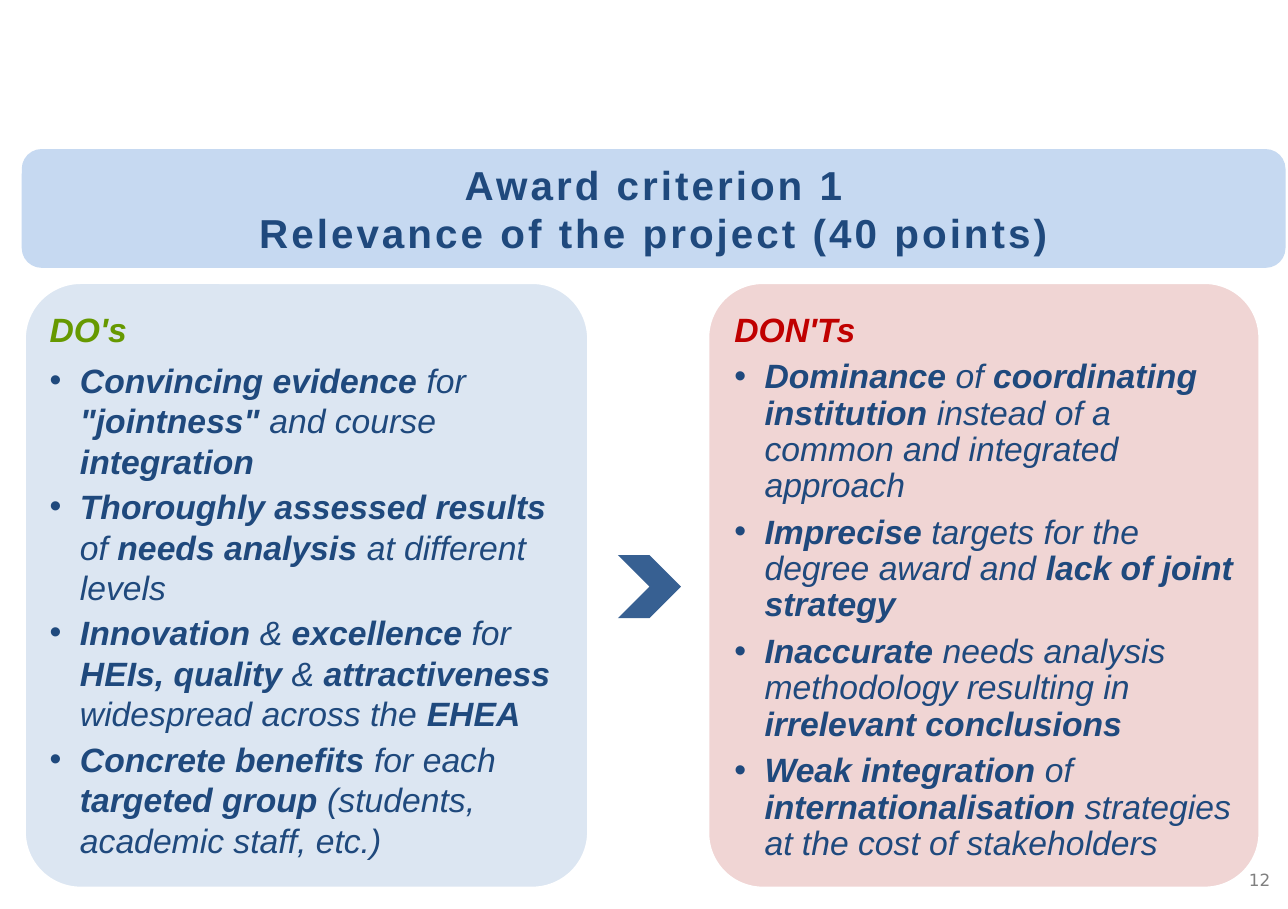
from lxml import etree
from pptx import Presentation
from pptx.dml.color import RGBColor
from pptx.enum.shapes import MSO_SHAPE
from pptx.enum.text import MSO_ANCHOR, MSO_AUTO_SIZE, PP_ALIGN
from pptx.oxml.ns import qn
from pptx.util import Inches, Pt

ROUNDED, CHEVRON = MSO_SHAPE.ROUNDED_RECTANGLE, MSO_SHAPE.CHEVRON
TOP, MIDDLE = MSO_ANCHOR.TOP, MSO_ANCHOR.MIDDLE
LEFT, CENTER = PP_ALIGN.LEFT, PP_ALIGN.CENTER
NO_FIT = MSO_AUTO_SIZE.NONE

COLORS = {
    "banner": "C6D9F1", "navy": "1F497D", "arrow": "376092",
    "do panel": "DCE6F2", "do": "669900",
    "dont panel": "E6B9B8", "dont": "C00000",
    "white": "FFFFFF", "grey": "808080",
}

# Asterisks enclose the bold words
DOS = [
    '*Convincing evidence* for *"jointness"* and course *integration*',
    "*Thoroughly assessed results* of *needs analysis *at different levels",
    "*Innovation *&* excellence* for *HEIs, quality* & *attractiveness*"
    " widespread across the *EHEA*",
    "*Concrete benefits* for each *targeted group*"
    " (students, academic staff, etc.)",
]
DONTS = [
    "*Dominance* of *coordinating institution* instead of a common"
    " and integrated approach",
    "*Imprecise* targets for the degree award and *lack of joint strategy*",
    "*Inaccurate* needs analysis methodology resulting in"
    " *irrelevant conclusions*",
    "*Weak integration* of *internationalisation* strategies"
    " at the cost of stakeholders",
]


class SlideBuilder:
    def __init__(self, page):
        self.page = page
        self.font = "Arial"

    def color(self, name):
        return RGBColor.from_string(COLORS[name])

    def shape(self, kind, area, fill, corner=None, opacity=None, outline=None):
        shape = self.page.shapes.add_shape(kind, *map(Inches, area))
        shape.shadow.inherit = False
        shape.fill.solid()
        shape.fill.fore_color.rgb = self.color(fill)
        if corner is not None:
            shape.adjustments[0] = corner
        if opacity is not None:
            tint = shape.fill._xPr.find(f".//{qn('a:srgbClr')}")
            etree.SubElement(tint, qn("a:alpha"), val=str(opacity * 1000))
        if outline:
            shape.line.color.rgb = self.color(outline)
            shape.line.width = Pt(2)
        else:
            shape.line.fill.background()

    def frame(self, box, area, anchor, side=0.08, end=0.08):
        box.left, box.top, box.width, box.height = map(Inches, area)
        text = box.text_frame
        text.word_wrap, text.auto_size = True, NO_FIT
        text.vertical_anchor = anchor
        text.margin_left = text.margin_right = Inches(side)
        text.margin_top = text.margin_bottom = Inches(end)
        return text

    def placeholder(self, number, area, anchor, end=0.08):
        box = self.page.placeholders[number]
        self.page.shapes._spTree.append(box._element)  # in front of its panel
        return self.frame(box, area, anchor, end=end)

    def para(self, text, first, align=LEFT, after=0, spacing=1.0, bullet=False):
        para = text.paragraphs[0] if first else text.add_paragraph()
        properties = para._p.get_or_add_pPr()
        indent = Inches(0.25) if bullet else 0
        properties.set("marL", str(indent))
        properties.set("indent", str(-indent))
        if bullet:
            etree.SubElement(properties, qn("a:buFont"), typeface="Arial")
            etree.SubElement(properties, qn("a:buChar"), char="•")
        else:
            etree.SubElement(properties, qn("a:buNone"))
        para.alignment, para.line_spacing = align, spacing
        para.space_before, para.space_after = Pt(0), Pt(after)
        return para

    def span(self, para, words, size, color, bold=False, italic=False,
             font=None, tracking=None):
        span = para.add_run()
        span.text = words
        span.font.name, span.font.size = font or self.font, Pt(size)
        span.font.bold, span.font.italic = bold, italic
        span.font.color.rgb = self.color(color)
        if tracking:
            span.font._element.set("spc", str(tracking))

    def advice(self, number, area, heading, color, items, after, spacing):
        text = self.placeholder(number, area, TOP)
        para = self.para(text, True, after=6)
        self.span(para, heading, 20, color, bold=True, italic=True)
        for item in items:
            para = self.para(text, False, after=after, spacing=spacing,
                             bullet=True)
            for place, words in enumerate(item.split("*")):
                if words:
                    self.span(para, words, 20, "navy", bold=place % 2 == 1,
                              italic=True)

    def title(self, area, lines):
        text = self.placeholder(0, area, MIDDLE, end=0.04)
        for place, words in enumerate(lines):
            para = self.para(text, place == 0, align=CENTER)
            self.span(para, words, 24, "navy", bold=True, tracking=180)

    def page_number(self, area, number):
        box = self.page.shapes.add_textbox(*map(Inches, area))
        text = self.frame(box, area, MIDDLE, side=0, end=0)
        para = self.para(text, True, align=CENTER)
        self.span(para, number, 10, "grey", font="DejaVu Sans")


def main():
    deck = Presentation()
    deck.slide_width, deck.slide_height = Inches(10.63), Inches(7.5)
    page = deck.slides.add_slide(deck.slide_layouts[3])
    builder = SlideBuilder(page)

    # Page number
    builder.page_number((10.15, 7.03, 0.49, 0.46), "12")

    # What to do
    builder.shape(ROUNDED, (0.2, 2.33, 4.66, 5), "do panel", corner=0.1,
                  outline="white")
    builder.advice(1, (0.33, 2.47, 4.39, 4.73), "DO's", "do", DOS,
                   after=3, spacing=1.0)

    # Arrow between the panels
    builder.shape(CHEVRON, (5.1, 4.58, 0.52, 0.52), "arrow")

    # What to avoid
    builder.shape(ROUNDED, (5.84, 2.33, 4.56, 5), "dont panel", corner=0.1,
                  opacity=60, outline="white")
    builder.advice(2, (5.98, 2.47, 4.3, 4.74), "DON'Ts", "dont", DONTS,
                   after=6, spacing=0.9)

    # Title banner
    banner = (0.18, 1.23, 10.43, 0.98)
    builder.shape(ROUNDED, banner, "banner")
    builder.title(banner, ["Award criterion 1",
                           "Relevance of the project (40 points)"])

    deck.save("out.pptx")


if __name__ == "__main__":
    main()
